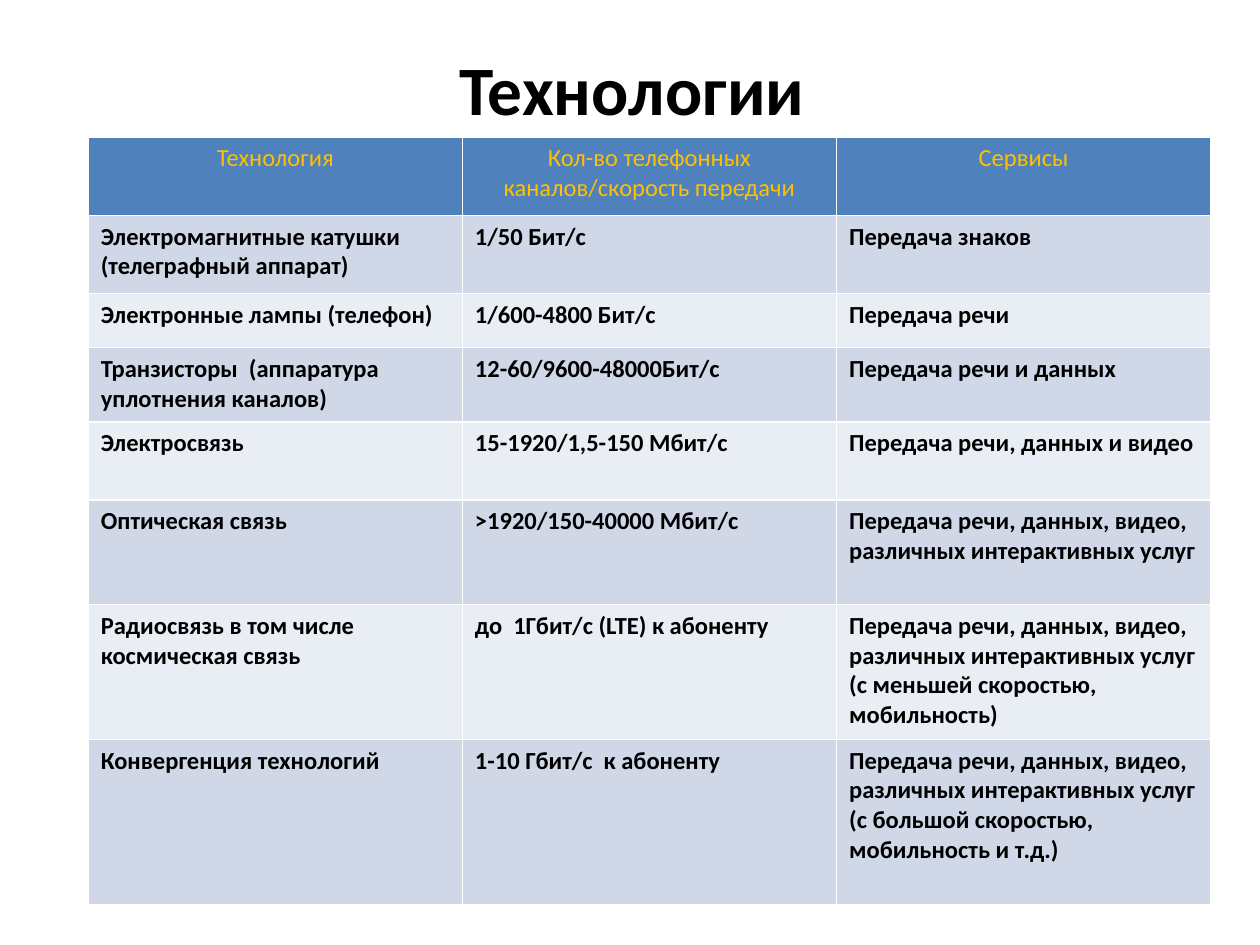
from pptx import Presentation
from pptx.dml.color import RGBColor
from pptx.enum.text import MSO_ANCHOR, PP_ALIGN
from pptx.util import Inches, Pt

COLORS = {
    "title": "000000",
    "header_fill": "4F81BD",
    "header_text": "FFC000",
    "odd_row": "D0D8E8",
    "even_row": "E9EDF4",
    "body_text": "000000",
}
FONT = "Calibri"
COLUMN_WIDTH = 2.97
ROW_HEIGHTS = [0.62, 0.62, 0.43, 0.59, 0.62, 0.83, 1.07, 1.31]

INTERACTIVE = "Передача речи, данных, видео, различных интерактивных услуг"
ROWS = [
    ("Технология", "Кол-во телефонных каналов/скорость передачи", "Сервисы"),
    ("Электромагнитные катушки (телеграфный аппарат)", "1/50 Бит/с", "Передача знаков"),
    ("Электронные лампы (телефон)", "1/600-4800 Бит/с", "Передача речи"),
    ("Транзисторы  (аппаратура уплотнения каналов)", "12-60/9600-48000Бит/с",
     "Передача речи и данных"),
    ("Электросвязь", "15-1920/1,5-150 Мбит/с", "Передача речи, данных и видео"),
    ("Оптическая связь", ">1920/150-40000 Мбит/с", INTERACTIVE),
    ("Радиосвязь в том числе космическая связь", "до  1Гбит/с (LTE) к абоненту",
     INTERACTIVE + "\n(с меньшей скоростью, мобильность)"),
    ("Конвергенция технологий", "1-10 Гбит/с  к абоненту",
     INTERACTIVE + "\n(с большой скоростью, мобильность и т.д.)"),
]


def write(frame, text, size, color, bold, align):
    frame.text = text
    for para in frame.paragraphs:
        para.alignment = align
        for span in para.runs:
            span.font.name = FONT
            span.font.size = Pt(size)
            span.font.bold = bold
            span.font.color.rgb = RGBColor.from_string(COLORS[color])


deck = Presentation()
deck.slide_width = Inches(10)
deck.slide_height = Inches(7.5)
page = deck.slides.add_slide(deck.slide_layouts[6])

title_box = page.shapes.add_textbox(Inches(0.5), Inches(0.3), Inches(9.03), Inches(0.79))
title_box.text_frame.word_wrap = True
title_box.text_frame.vertical_anchor = MSO_ANCHOR.MIDDLE
write(title_box.text_frame, "Технологии", 39.6, "title", True, PP_ALIGN.CENTER)

# The default table style supplies the white cell borders.
table = page.shapes.add_table(
    len(ROWS), len(ROWS[0]), Inches(0.7), Inches(1.09),
    Inches(COLUMN_WIDTH * len(ROWS[0])), Inches(sum(ROW_HEIGHTS)),
).table
for column in table.columns:
    column.width = Inches(COLUMN_WIDTH)

for row_index, (texts, height) in enumerate(zip(ROWS, ROW_HEIGHTS)):
    table.rows[row_index].height = Inches(height)
    is_header = row_index == 0
    if is_header:
        fill, color, align = "header_fill", "header_text", PP_ALIGN.CENTER
    else:
        fill = "odd_row" if row_index % 2 else "even_row"
        color, align = "body_text", PP_ALIGN.LEFT
    for column_index, text in enumerate(texts):
        cell = table.cell(row_index, column_index)
        cell.fill.solid()
        cell.fill.fore_color.rgb = RGBColor.from_string(COLORS[fill])
        write(cell.text_frame, text, 14, color, not is_header, align)

deck.save("out.pptx")
